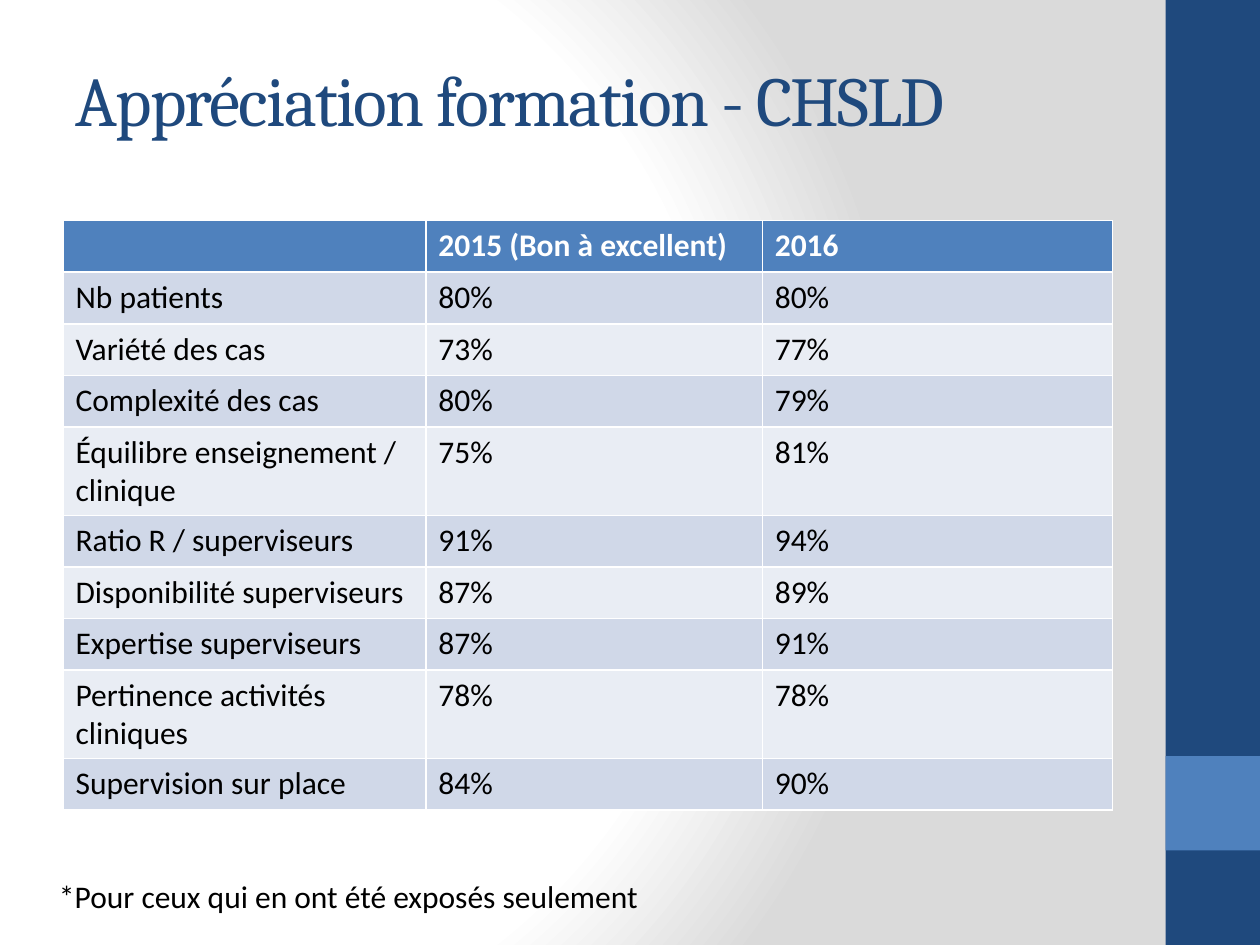
"""Build the CHSLD training appreciation slide."""
import pptx
import pptx.dml.color
import pptx.enum.shapes
import pptx.enum.text
import pptx.oxml
import pptx.util

Inches, Pt = pptx.util.Inches, pptx.util.Pt

TITLE = "Appréciation formation - CHSLD"
NOTE = "*Pour ceux qui en ont été exposés seulement"
ROWS = [
    ("", "2015 (Bon à excellent)", "2016"),
    ("Nb patients", "80%", "80%"),
    ("Variété des cas", "73%", "77%"),
    ("Complexité des cas", "80%", "79%"),
    ("Équilibre enseignement / clinique", "75%", "81%"),
    ("Ratio R / superviseurs", "91%", "94%"),
    ("Disponibilité superviseurs", "87%", "89%"),
    ("Expertise superviseurs", "87%", "91%"),
    ("Pertinence activités cliniques", "78%", "78%"),
    ("Supervision sur place", "84%", "90%"),
]
COL_WIDTHS = (2.88, 2.67, 2.78)
ROW_HEIGHT = 0.41
NAVY, BLUE, WHITE, BLACK = "1F497D", "4F81BD", "FFFFFF", "000000"
BANDS = ("E9EDF4", "D0D8E8")
BARS = [((9.25, 0, 0.75, 7.5), NAVY), ((9.25, 6, 0.75, 0.75), BLUE)]
STOPS = [(0, WHITE), (75, WHITE), (100, "DADADA")]


def rgb(color):
    return pptx.dml.color.RGBColor.from_string(color)


def paint(fill, color):
    fill.solid()
    fill.fore_color.rgb = rgb(color)


def add_run(tf, text, size, color, font="Calibri", bold=False):
    r = tf.paragraphs[0].add_run()
    r.text = text
    r.font.size, r.font.name, r.font.bold = Pt(size), font, bold
    r.font.color.rgb = rgb(color)
    return r


def add_background(s):
    s.background.fill.solid()
    bg = s.background._cSld.bg.bgPr
    stops = "".join(
        f'<a:gs pos="{pos * 1000}"><a:srgbClr val="{color}"/></a:gs>'
        for pos, color in STOPS)
    grad = pptx.oxml.parse_xml(
        '<a:gradFill xmlns:a="http://schemas.openxmlformats.org/drawingml/2006/main"'
        f' rotWithShape="1"><a:gsLst>{stops}</a:gsLst><a:path path="circle">'
        '<a:fillToRect l="20000" t="50000" r="100000" b="50000"/></a:path></a:gradFill>')
    bg.replace(bg[0], grad)


def add_bars(s):
    for box, color in BARS:
        sp = s.shapes.add_shape(
            pptx.enum.shapes.MSO_SHAPE.RECTANGLE, *map(Inches, box))
        sp.shadow.inherit = False
        paint(sp.fill, color)
        sp.line.fill.background()


def add_text(s, box, wrap, *run):
    tf = s.shapes.add_textbox(*map(Inches, box)).text_frame
    tf.word_wrap = wrap
    return tf, add_run(tf, *run)


def add_results(s):
    table = s.shapes.add_table(
        len(ROWS), len(COL_WIDTHS), Inches(0.5), Inches(1.75),
        Inches(sum(COL_WIDTHS)), Inches(ROW_HEIGHT * len(ROWS))).table
    for column, width in zip(table.columns, COL_WIDTHS):
        column.width = Inches(width)
    for i, row in enumerate(ROWS):
        header = i == 0
        table.rows[i].height = Inches(ROW_HEIGHT)
        for j, text in enumerate(row):
            cell = table.cell(i, j)
            paint(cell.fill, BLUE if header else BANDS[i % 2])
            if text:
                add_run(cell.text_frame, text, 18,
                        WHITE if header else BLACK, bold=header)


def main():
    prs = pptx.Presentation()
    prs.slide_width, prs.slide_height = Inches(10), Inches(7.5)
    s = prs.slides.add_slide(prs.slide_layouts[6])
    add_background(s)
    add_bars(s)
    tf, r = add_text(s, (0.5, 0.16, 8.33, 1.25), True, TITLE, 40, NAVY, "Cambria")
    tf.vertical_anchor = pptx.enum.text.MSO_ANCHOR.MIDDLE
    r.font._element.set("spc", "-100")
    add_results(s)
    tf, r = add_text(s, (0.37, 6.91, 4.86, 0.4), False, NOTE, 18, BLACK)
    tf.auto_size = pptx.enum.text.MSO_AUTO_SIZE.SHAPE_TO_FIT_TEXT
    prs.save("out.pptx")


if __name__ == "__main__":
    main()
